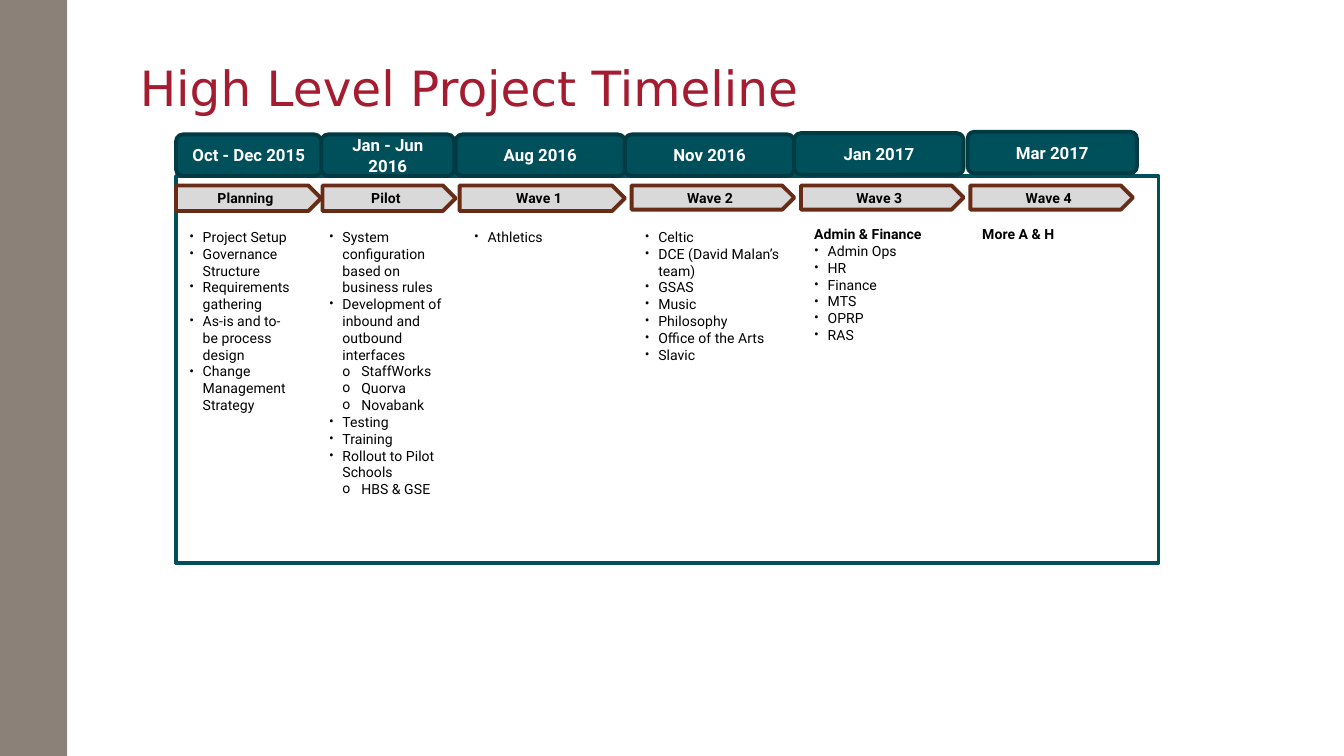
from lxml.etree import SubElement
from pptx import Presentation
from pptx.dml.color import RGBColor
from pptx.enum.shapes import MSO_SHAPE as Shape
from pptx.enum.text import MSO_ANCHOR as Anchor, MSO_AUTO_SIZE as AutoSize, PP_ALIGN as Align
from pptx.oxml.ns import qn
from pptx.util import Inches, Pt

COLORS = {
    "sidebar": "8C8179", "title": "A51C30", "teal": "00505C", "dark_teal": "003B44",
    "gray": "D9D9D9", "brown": "682C16", "white": "FFFFFF", "black": "000000",
}
TITLE = "High Level Project Timeline"
HEADING, BULLET, SUB = "heading", "bullet", "sub"
BULLETS = {BULLET: ("•", 0.1, 0.1), SUB: ("o", 0.24, 0.14)}

PHASES = [
    {"date": "Oct - Dec 2015", "name": "Planning",
     "date_at": (1.31, 1, 1.08), "arrow_at": (1.31, 1.08, 0.19), "list_at": (1.31, 1.65, 0.98, 1.49),
     "items": [(BULLET, "Project Setup"), (BULLET, "Governance Structure"),
               (BULLET, "Requirements gathering"), (BULLET, "As-is and to-be process design"),
               (BULLET, "Change Management Strategy")]},
    {"date": "Jan - Jun 2016", "name": "Pilot",
     "date_at": (2.39, 1, 0.99), "arrow_at": (2.4, 0.99, 0.19), "list_at": (2.35, 1.65, 1.07, 2.12),
     "items": [(BULLET, "System configuration based on business rules"),
               (BULLET, "Development of inbound and outbound interfaces"),
               (SUB, "StaffWorks"), (SUB, "Quorva"), (SUB, "Novabank"),
               (BULLET, "Testing"), (BULLET, "Training"),
               (BULLET, "Rollout to Pilot Schools"), (SUB, "HBS & GSE")]},
    {"date": "Aug 2016", "name": "Wave 1",
     "date_at": (3.39, 1, 1.26), "arrow_at": (3.42, 1.23, 0.19), "list_at": (3.43, 1.65, 1.22, 0.23),
     "items": [(BULLET, "Athletics")]},
    {"date": "Nov 2016", "name": "Wave 2",
     "date_at": (4.65, 1, 1.26), "arrow_at": (4.7, 1.21, 0.18), "list_at": (4.7, 1.65, 1.33, 1.11),
     "items": [(BULLET, "Celtic"), (BULLET, "DCE (David Malan’s team)"), (BULLET, "GSAS"),
               (BULLET, "Music"), (BULLET, "Philosophy"), (BULLET, "Office of the Arts"),
               (BULLET, "Slavic")]},
    {"date": "Jan 2017", "name": "Wave 3",
     "date_at": (5.91, 0.99, 1.26), "arrow_at": (5.96, 1.21, 0.18), "list_at": (5.96, 1.63, 1.1, 1.11),
     "items": [(HEADING, "Admin & Finance"), (BULLET, "Admin Ops"), (BULLET, "HR"),
               (BULLET, "Finance"), (BULLET, "MTS"), (BULLET, "OPRP"), (BULLET, "RAS")]},
    {"date": "Mar 2017", "name": "Wave 4",
     "date_at": (7.2, 0.98, 1.26), "arrow_at": (7.22, 1.21, 0.18), "list_at": (7.21, 1.63, 1.1, 0.35),
     "items": [(HEADING, "More A & H")]},
]
SLIDE_WIDTH = 10
SLIDE_HEIGHT = SLIDE_WIDTH * 9 / 16
DATE_HEIGHT = 0.31
ARROW_TOP = 1.38
LINE_WIDTH = 2.08


def color(name):
    return RGBColor.from_string(COLORS[name])


def set_values(target, values):
    for name, value in values.items():
        setattr(target, name, value)


def write(para, text, size, ink, bold=False, font="Roboto"):
    span = para.add_run()
    span.text = text
    set_values(span.font, {"size": Pt(size), "name": font, "bold": bold})
    span.font.color.rgb = color(ink)


def add_block(page, preset, place, fill, line=None):
    block = page.shapes.add_shape(preset, *map(Inches, place))
    block.shadow.inherit = False
    block.fill.solid()
    block.fill.fore_color.rgb = color(fill)
    if line:
        block.line.color.rgb = color(line)
        block.line.width = Pt(LINE_WIDTH)
    else:
        block.line.fill.background()
    return block


def add_label(page, preset, place, fill, line, text, size, ink):
    frame = add_block(page, preset, place, fill, line).text_frame
    set_values(frame, {"word_wrap": True, "vertical_anchor": Anchor.MIDDLE})
    para = frame.paragraphs[0]
    para.alignment = Align.CENTER
    write(para, text, size, ink, bold=True)


def add_bullet(para, kind):
    mark, margin, hang = BULLETS[kind]
    para.level = 1 if kind == SUB else 0
    props = para._p.get_or_add_pPr()
    props.set("marL", str(Inches(margin)))
    props.set("indent", str(-Inches(hang)))
    SubElement(props, qn("a:buFont")).set("typeface", "Roboto")
    SubElement(props, qn("a:buChar")).set("char", mark)


def add_list(page, place, items):
    frame = page.shapes.add_textbox(*map(Inches, place)).text_frame
    set_values(frame, {"word_wrap": True, "auto_size": AutoSize.SHAPE_TO_FIT_TEXT})
    for index, (kind, text) in enumerate(items):
        para = frame.add_paragraph() if index else frame.paragraphs[0]
        if kind in BULLETS:
            add_bullet(para, kind)
        write(para, text, 7.5, "black", bold=kind == HEADING)


def add_title(page):
    title = page.shapes.title
    places = zip(("left", "top", "width", "height"), (1.04, 0.39, 8.43, 0.53))
    set_values(title, {name: Inches(value) for name, value in places})
    set_values(title.text_frame, {
        "word_wrap": True, "auto_size": AutoSize.NONE, "vertical_anchor": Anchor.BOTTOM,
        "margin_left": 0, "margin_right": Inches(0.1),
        "margin_top": Inches(0.05), "margin_bottom": Inches(0.05),
    })
    para = title.text_frame.paragraphs[0]
    set_values(para, {"alignment": Align.LEFT, "line_spacing": 0.85})
    write(para, TITLE, 26, "title", font="DejaVu Sans")


def main():
    deck = Presentation()
    set_values(deck, {"slide_width": Inches(SLIDE_WIDTH), "slide_height": Inches(SLIDE_HEIGHT)})
    page = deck.slides.add_slide(deck.slide_layouts[5])
    add_title(page)
    add_block(page, Shape.RECTANGLE, (0, 0, 0.5, SLIDE_HEIGHT), "sidebar")
    add_block(page, Shape.RECTANGLE, (1.31, 1.31, 7.31, 2.88), "white", "teal")
    for phase in PHASES:
        left, width, height = phase["arrow_at"]
        add_label(page, Shape.PENTAGON, (left, ARROW_TOP, width, height),
                  "gray", "brown", phase["name"], 7.5, "black")
        add_label(page, Shape.ROUNDED_RECTANGLE, (*phase["date_at"], DATE_HEIGHT),
                  "teal", "dark_teal", phase["date"], 9, "white")
        add_list(page, phase["list_at"], phase["items"])
    deck.save("out.pptx")


if __name__ == "__main__":
    main()
